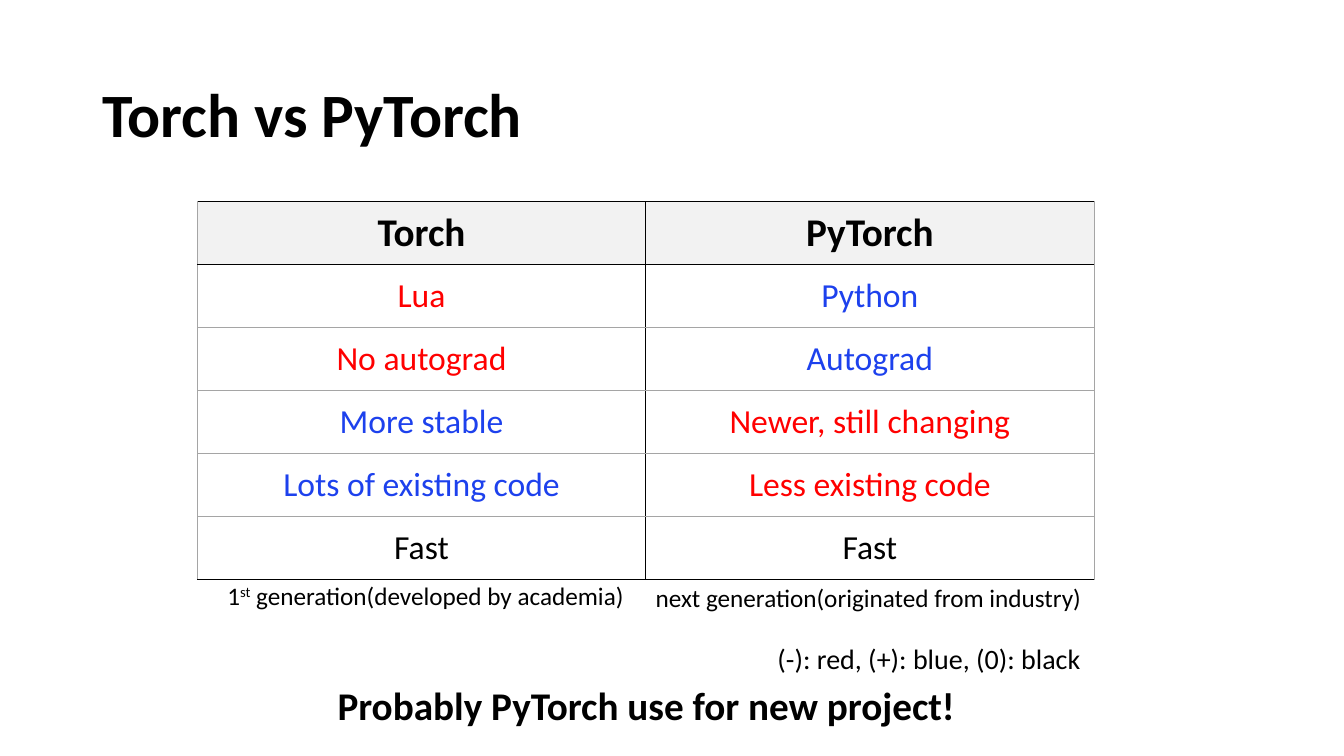
from lxml import etree
from pptx import Presentation
from pptx.dml.color import RGBColor
from pptx.enum.text import MSO_ANCHOR, PP_ALIGN
from pptx.oxml.ns import qn
from pptx.util import Emu, Pt

PX = 9525
FONT = "Calibri"
BLACK, RED, BLUE = "000000", "FF0000", "1D41ED"
GREY, HEADER_FILL = "A5A5A5", "F2F2F2"
MIDDLE, TOP = MSO_ANCHOR.MIDDLE, MSO_ANCHOR.TOP
CENTER = PP_ALIGN.CENTER

COL_W, ROW_H = 427, 60
ROWS = [
    (("Torch", BLACK), ("PyTorch", BLACK)),
    (("Lua", RED), ("Python", BLUE)),
    (("No autograd", RED), ("Autograd", BLUE)),
    (("More stable", BLUE), ("Newer, still changing", RED)),
    (("Lots of existing code", BLUE), ("Less existing code", RED)),
    (("Fast", BLACK), ("Fast", BLACK)),
]


def px(n):
    return Emu(n * PX)


def rgb(color):
    return RGBColor.from_string(color)


def format_run(r, size, color=BLACK, bold=False):
    r.font.name = FONT
    r.font.size = Pt(size)
    r.font.bold = bold
    r.font.color.rgb = rgb(color)


def add_text(slide, box, runs, size, bold=False, wrap=False, anchor=TOP):
    """Add a one-line text box; runs are (text, is_superscript) pairs."""
    tf = slide.shapes.add_textbox(*map(px, box)).text_frame
    tf.word_wrap = wrap
    tf.vertical_anchor = anchor
    p = tf.paragraphs[0]
    for text, superscript in runs:
        r = p.add_run()
        r.text = text
        format_run(r, size, bold=bold)
        if superscript:
            r._r.get_or_add_rPr().set("baseline", "30000")


def set_border(cell, side, strong):
    """Draw one cell edge, black 1 pt if strong, else grey 0.5 pt."""
    ln = etree.SubElement(cell._tc.get_or_add_tcPr(), qn("a:ln" + side),
                          w=str(Pt(1 if strong else 0.5)))
    fill = etree.SubElement(ln, qn("a:solidFill"))
    etree.SubElement(fill, qn("a:srgbClr"), val=BLACK if strong else GREY)


def format_cell(cell, text, color, header):
    cell.text = text
    cell.vertical_anchor = MIDDLE
    p = cell.text_frame.paragraphs[0]
    p.alignment = CENTER
    format_run(p.runs[0], 28 if header else 24, color, header)
    if header:
        cell.fill.solid()
        cell.fill.fore_color.rgb = rgb(HEADER_FILL)
    else:
        cell.fill.background()


def add_comparison(slide, left, top):
    n_rows, n_cols = len(ROWS), len(ROWS[0])
    table = slide.shapes.add_table(n_rows, n_cols, px(left), px(top),
                                   px(n_cols * COL_W), px(n_rows * ROW_H)).table
    strong_lines = (0, 1, n_rows)
    for col in table.columns:
        col.width = px(COL_W)
    for i, row in enumerate(ROWS):
        table.rows[i].height = px(ROW_H)
        for j, (text, color) in enumerate(row):
            cell = table.cell(i, j)
            set_border(cell, "L", j == 1)
            set_border(cell, "R", j == 0)
            set_border(cell, "T", i in strong_lines)
            set_border(cell, "B", i + 1 in strong_lines)
            format_cell(cell, text, color, header=i == 0)


def main():
    prs = Presentation()
    prs.slide_width, prs.slide_height = px(1280), px(720)
    slide = prs.slides.add_slide(prs.slide_layouts[6])

    add_text(slide, (88, 38, 1104, 139), [("Torch vs PyTorch", False)], 44,
             bold=True, wrap=True, anchor=MIDDLE)
    add_comparison(slide, 188, 192)
    add_text(slide, (731, 606, 311, 42),
             [("(-): red, (+): blue, (0): black", False)], 20)
    add_text(slide, (312, 644, 614, 55),
             [("Probably PyTorch use for new project!", False)], 28, bold=True)
    add_text(slide, (207, 548, 403, 39),
             [("1", False), ("st", True),
              (" generation(developed by academia)", False)], 18)
    add_text(slide, (615, 550, 430, 39),
             [("next generation(originated from industry)", False)], 18)
    prs.save("out.pptx")


if __name__ == "__main__":
    main()
